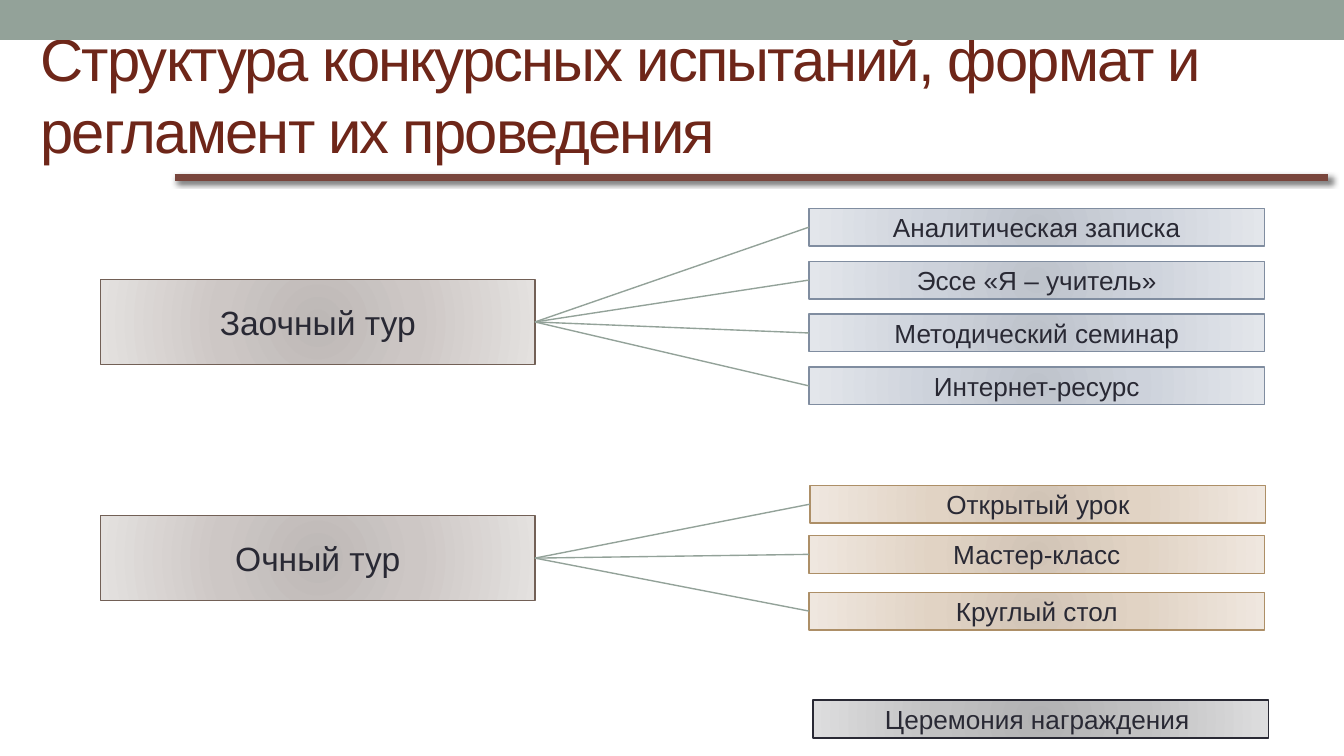
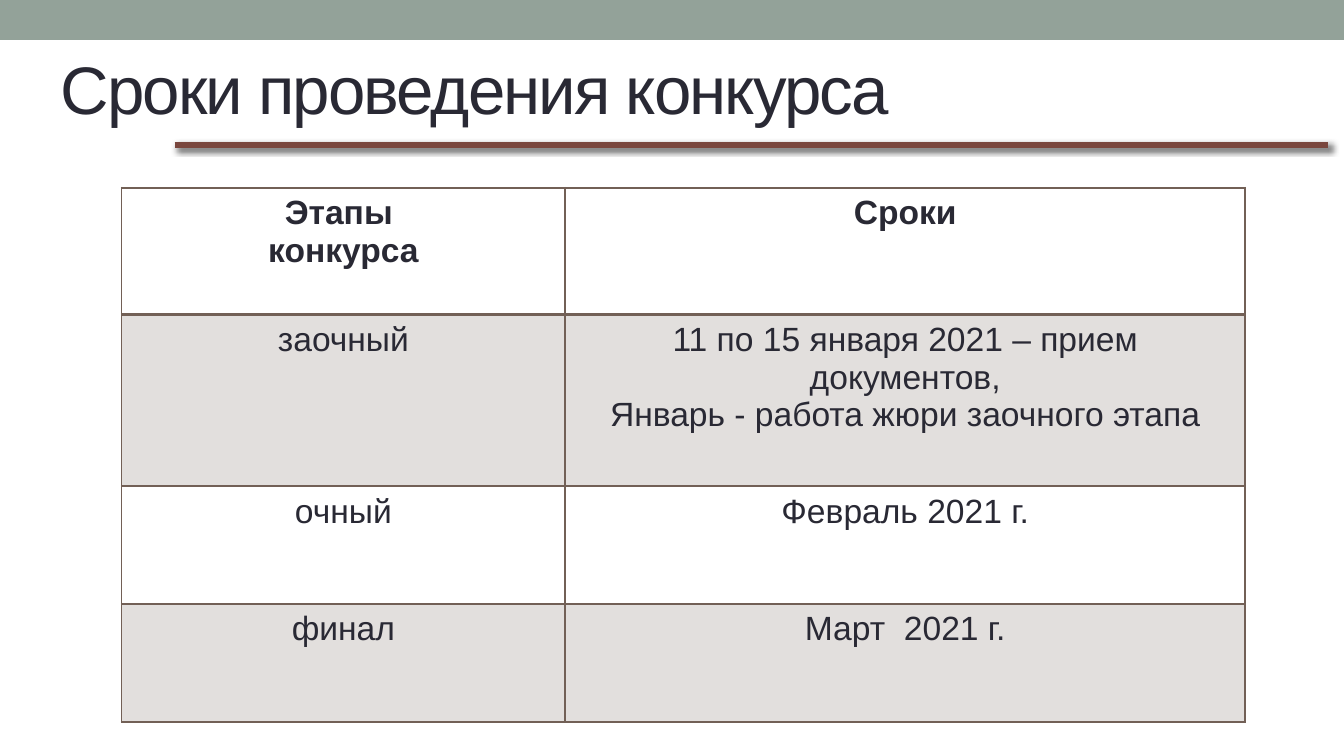
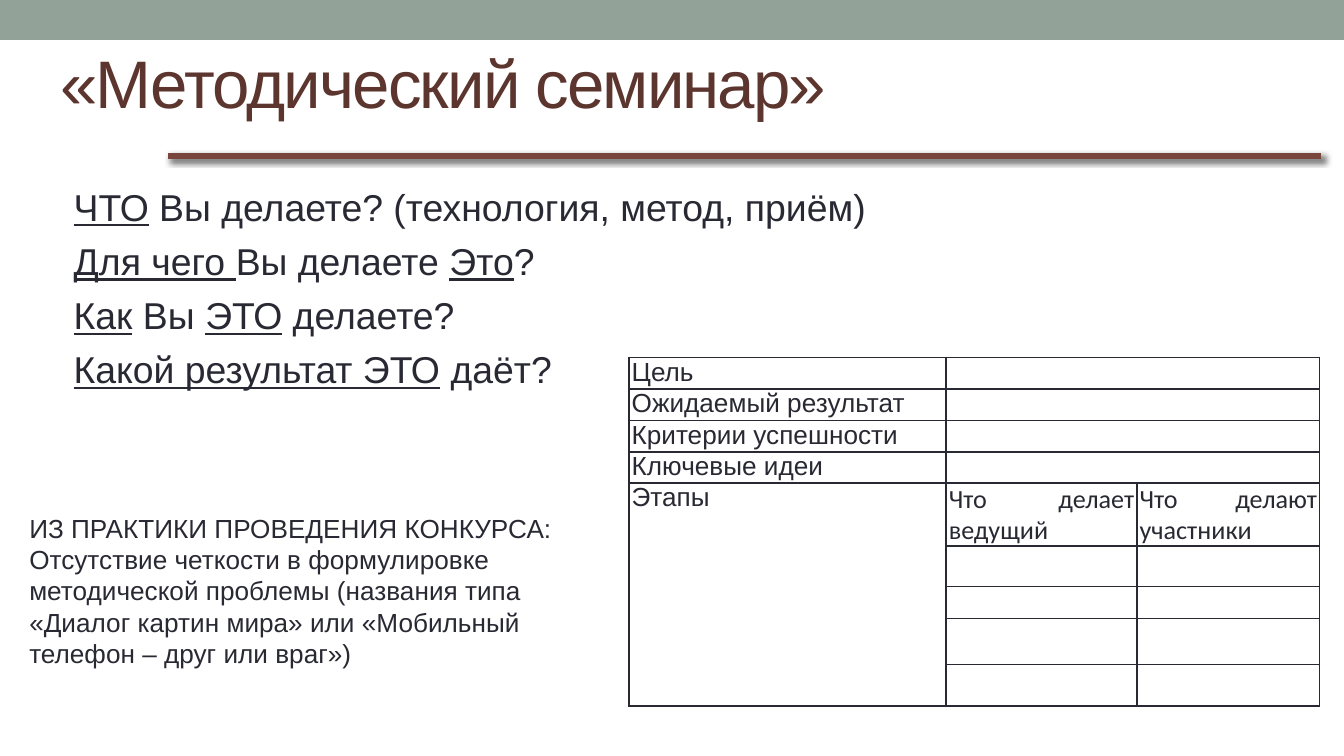
from lxml.etree import SubElement
from pptx import Presentation
from pptx.dml.color import RGBColor
from pptx.enum.shapes import MSO_CONNECTOR as Link, MSO_SHAPE as Form
from pptx.enum.text import MSO_ANCHOR as Anchor, MSO_AUTO_SIZE as Fit, PP_ALIGN as Align
from pptx.oxml import parse_xml
from pptx.oxml.ns import qn
from pptx.util import Pt

NS = 'xmlns:a="http://schemas.openxmlformats.org/drawingml/2006/main"'
HUES = {
    "band": "93A299", "rule": "79463D", "ink": "292934", "rust": "6E2619",
    "brown": "5B352E", "taupe": "726056", "blue": "808DA0", "sand": "AD8F67",
}
# Gradient stops from the centre to the edge
GRADS = {
    "taupe": ("BDB8B6", "CDC7C5", "E4E1DF"),
    "blue": ("BEC3CB", "CDD2DB", "E3E6EB"),
    "sand": ("D1C4B6", "E1D3C4", "EFE7DF"),
    "ink": ("B2B2B3", "C1C1C2", "DDDDDE"),
}


def hue(name):
    return RGBColor.from_string(HUES[name])


class Deck:
    def __init__(self):
        self.prs = Presentation()
        self.prs.slide_width, self.prs.slide_height = Pt(720), Pt(405)
        self.slide = None

    # Slide with band and title
    def start(self, text, x, y, w, h, size, color):
        self.slide = self.prs.slides.add_slide(self.prs.slide_layouts[5])
        band = self.slide.shapes.add_shape(Form.RECTANGLE, 0, 0, Pt(720), Pt(21.4))
        band.shadow.inherit = False
        band.fill.solid()
        band.fill.fore_color.rgb = hue("band")
        band.line.fill.background()
        title = self.slide.shapes.title
        title.left, title.top, title.width, title.height = map(Pt, (x, y, w, h))
        frame = title.text_frame
        frame.auto_size = Fit.NONE
        frame.vertical_anchor = Anchor.MIDDLE
        self.put(frame, [text], size, color=color)
        frame.paragraphs[0].runs[0]._r.get_or_add_rPr().set("spc", "-100")

    # Paragraphs; text between underscores is underlined
    def put(self, frame, lines, size, align=Align.LEFT, color="ink", font="Arial", bold=False):
        frame.word_wrap = True
        for i, line in enumerate(lines):
            para = frame.add_paragraph() if i else frame.paragraphs[0]
            para.alignment = align
            para.font.size, para.font.name, para.font.bold = Pt(size), font, bold
            para.font.color.rgb = hue(color)
            for j, part in enumerate(line.split("_")):
                if part:
                    run = para.add_run()
                    run.text = part
                    if j % 2:
                        run.font.underline = True

    def text(self, lines, x, y, w, h, size):
        box = self.slide.shapes.add_textbox(Pt(x), Pt(y), Pt(w), Pt(h))
        self.put(box.text_frame, lines, size)
        return box.text_frame.paragraphs

    # Framed box with a round gradient
    def box(self, text, x, y, w, h, size, tone):
        box = self.slide.shapes.add_shape(Form.RECTANGLE, Pt(x), Pt(y), Pt(w), Pt(h))
        box.shadow.inherit = False
        stops = "".join(
            f'<a:gs pos="{pos}"><a:srgbClr val="{val}"/></a:gs>'
            for pos, val in zip((0, 45000, 100000), GRADS[tone]))
        box._element.spPr.find(qn("a:prstGeom")).addnext(parse_xml(
            f'<a:gradFill {NS}><a:gsLst>{stops}</a:gsLst><a:path path="circle">'
            '<a:fillToRect l="100000" t="100000" r="100000" b="100000"/>'
            '</a:path></a:gradFill>'))
        box.line.color.rgb = hue(tone)
        box.line.width = Pt(0.75)
        box.text_frame.vertical_anchor = Anchor.MIDDLE
        self.put(box.text_frame, [text], size, Align.CENTER)
        return box

    def line(self, x1, y1, x2, y2, color, width):
        line = self.slide.shapes.add_connector(Link.STRAIGHT, Pt(x1), Pt(y1), Pt(x2), Pt(y2))
        line.line.color.rgb = hue(color)
        line.line.width = Pt(width)
        return line, SubElement(line._element.spPr, qn("a:effectLst"))

    # Thick rule with a soft shadow
    def rule(self, x, y):
        effects = self.line(x, y, x + 617.8, y, "rule", 3.5)[1]
        effects.append(parse_xml(
            f'<a:outerShdw {NS} blurRad="{Pt(3)}" dist="{Pt(2)}" dir="2700000">'
            '<a:srgbClr val="000000"><a:alpha val="60000"/></a:srgbClr></a:outerShdw>'))

    def join(self, root, leaf):
        link = self.line(0, 0, 1, 1, "band", 0.75)[0]
        link.begin_connect(root, 3)
        link.end_connect(leaf, 1)

    def table(self, x, y, cols, rows):
        grid = self.slide.shapes.add_table(
            len(rows), len(cols), Pt(x), Pt(y), Pt(sum(cols)), Pt(sum(rows))).table
        grid.first_row = grid.horz_banding = False
        for col, w in zip(grid.columns, cols):
            col.width = Pt(w)
        for row, h in zip(grid.rows, rows):
            row.height = Pt(h)
        return grid

    def cell(self, cell, lines, size, align, pad, edge, shade=False, base=1, **style):
        cell.margin_left = cell.margin_right = Pt(pad[0])
        cell.margin_top = cell.margin_bottom = Pt(pad[1])
        self.put(cell.text_frame, lines or [""], size, align, **style)
        if not lines:
            end = SubElement(cell.text_frame.paragraphs[0]._p, qn("a:endParaRPr"))
            end.set("sz", str(size * 100))
        props = cell._tc.get_or_add_tcPr()
        if shade:
            cell.fill.solid()
            cell.fill.fore_color.rgb = hue(edge)
            SubElement(props.find(".//" + qn("a:srgbClr")), qn("a:alpha")).set("val", "20000")
        else:
            cell.fill.background()
        for i, side in enumerate("LRTB"):
            width = Pt(base if side == "B" else 1)
            props.insert(i, parse_xml(
                f'<a:ln{side} {NS} w="{width}"><a:solidFill><a:srgbClr val="{HUES[edge]}"/>'
                f'</a:solidFill></a:ln{side}>'))


def rounds(deck):
    deck.start("Структура конкурсных испытаний, формат и регламент их проведения",
               14.4, 20.9, 648, 58.3, 32, "rust")
    deck.rule(93.6, 95)
    # Each round: name, top, tone, and its tests with left and top
    parts = [
        ("Заочный тур", 149.8, "blue", [
            (name, 433.4, 111.6 + 28.35 * i) for i, name in enumerate((
                "Аналитическая записка", "Эссе «Я – учитель»",
                "Методический семинар", "Интернет-ресурс"))]),
        ("Очный тур", 276.3, "sand", [
            ("Открытый урок", 434, 260), ("Мастер-класс", 433.4, 286.9),
            ("Круглый стол", 433.4, 317.3)]),
    ]
    size = 244.1, 20.2, 14
    for name, top, tone, tests in parts:
        root = deck.box(name, 54, top, 232.6, 45.4, 18, "taupe")
        for test, x, y in tests:
            deck.join(root, deck.box(test, x, y, *size, tone))
    deck.box("Церемония награждения ", 435.6, 375.1, *size, "ink")


def dates(deck):
    deck.start("Сроки проведения конкурса", 25.2, 23.8, 648, 46.1, 36, "ink")
    rows = [
        (["Этапы ", "конкурса"], ["Сроки"]),
        (["заочный"], ["11 по 15 января 2021 – прием документов,",
                       "Январь - работа жюри заочного этапа"]),
        (["очный"], ["Февраль 2021 г."]),
        (["финал"], ["Март  2021 г."]),
    ]
    grid = deck.table(65.2, 100.6, (237.6, 364.3), (67.9, 91.8, 63.2, 63.2))
    for r, row in enumerate(rows):
        for c, lines in enumerate(row):
            deck.cell(grid.cell(r, c), lines, 18, Align.CENTER, (7.2, 3.6), "taupe",
                      shade=r % 2 == 1, base=1 if r else 2, bold=r == 0)
    deck.rule(93.6, 77.8)


def seminar(deck):
    deck.start("«Методический семинар»", 25.2, 10.1, 648, 67.7, 36, "brown")
    # Questions with a hanging indent
    for para in deck.text([
            "_ЧТО_ Вы делаете? (технология, метод, приём)",
            "_Для чего _Вы делаете _Это_?",
            "_Как_ Вы _ЭТО_ делаете?",
            "_Какой результат ЭТО_ даёт?"], -2.9, 95, 566.6, 176.4, 20):
        para.space_before = Pt(5)
        props = para._p.get_or_add_pPr()
        props.set("marL", str(Pt(56.9)))
        props.set("indent", str(Pt(-21.6)))
    deck.text([
        "ИЗ ПРАКТИКИ ПРОВЕДЕНИЯ КОНКУРСА:",
        "Отсутствие четкости в формулировке методической проблемы (названия типа "
        "«Диалог картин мира» или «Мобильный телефон – друг или враг»)",
    ], 8.6, 270.7, 308.9, 92.2, 14)
    deck.rule(90, 83.5)
    # Plan to fill in
    names = ["Цель", "Ожидаемый результат", "Критерии успешности", "Ключевые идеи", "Этапы"]
    words = {(r, 0): name for r, name in enumerate(names)}
    words.update({(4, 1): "Что делает ведущий", (4, 2): "Что делают участники"})
    rows = [12.2] * 4 + [23.8, 21.6, 17.3, 24.5, 22.3]
    grid = deck.table(337, 191.5, (169.9, 102.2, 97.9), rows)
    for r in range(len(rows)):
        for c in range(3):
            word = words.get((r, c))
            deck.cell(grid.cell(r, c), [word] if word else [], 14, Align.JUSTIFY,
                      (1.4, 0), "ink", font="Calibri" if c else "Arial")
    for r in range(4):
        grid.cell(r, 1).merge(grid.cell(r, 2))
    grid.cell(4, 0).merge(grid.cell(8, 0))


def main():
    deck = Deck()
    for part in (rounds, dates, seminar):
        part(deck)
    deck.prs.save("out.pptx")


if __name__ == "__main__":
    main()
